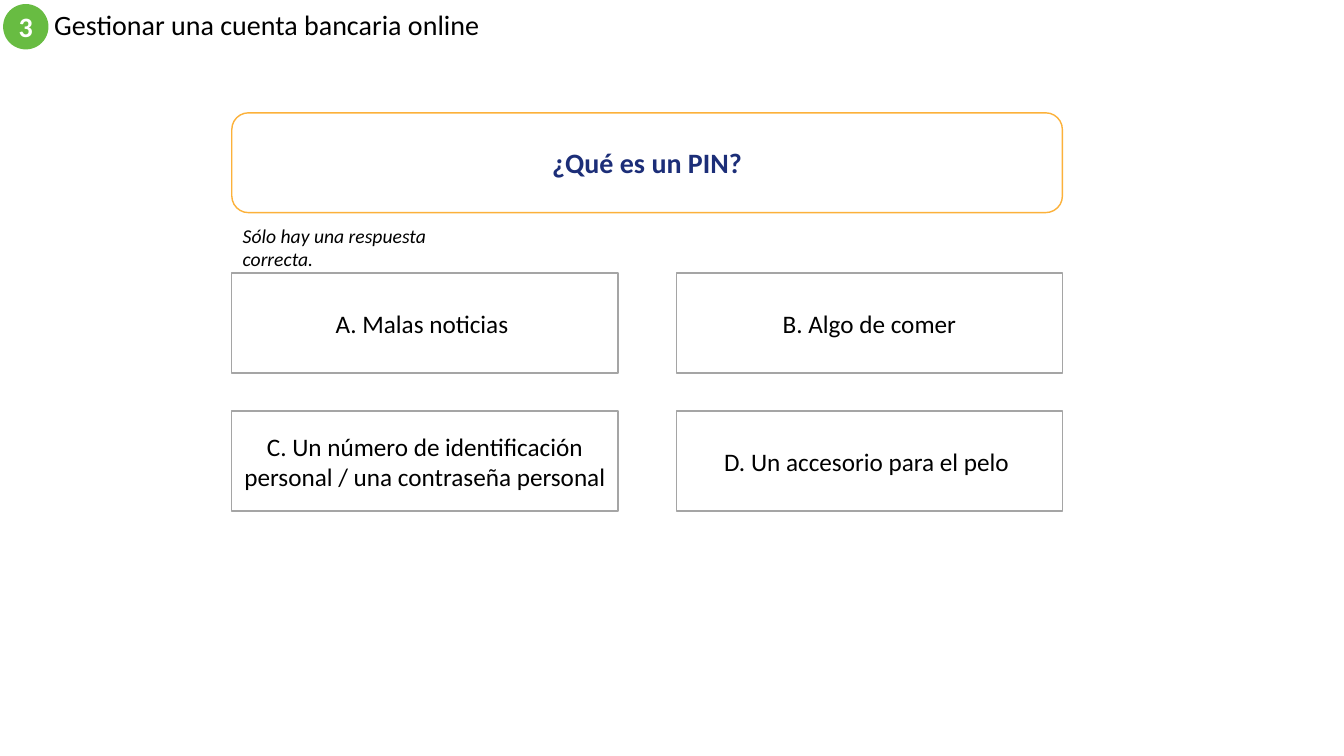
from pptx import Presentation
from pptx import util as u
from pptx.dml.color import RGBColor
from pptx.enum import shapes, text

COLORS = {
    "white": "FFFFFF",
    "black": "000000",
    "green": "68BC42",
    "orange": "FCB13A",
    "navy": "1C2E78",
    "gray": "A5A5A5",
}
FONT = "Calibri"
LEFT_COLUMN = 165.6
ANSWER_TOP = 195.1
COLUMN_STEP = 317.5
ROW_STEP = 98.6
ANSWER_WIDTH = 275.8
BOX_HEIGHT = 71.3
ANSWERS = [
    "A. Malas noticias ",
    "B. Algo de comer",
    "C. Un número de identificación personal / una contraseña personal",
    "D. Un accesorio para el pelo ",
]


def rgb(name):
    return RGBColor.from_string(COLORS[name])


def write_text(shape, content, size=18, color="black", bold=False, italic=False,
               align=text.PP_ALIGN.CENTER, anchor=text.MSO_ANCHOR.MIDDLE,
               line_spacing=None):
    frame = shape.text_frame
    frame.word_wrap = True
    frame.vertical_anchor = anchor
    paragraph = frame.paragraphs[0]
    paragraph.alignment = align
    paragraph.line_spacing = line_spacing
    run = paragraph.add_run()
    run.text = content
    run.font.name = FONT
    run.font.size = u.Pt(size)
    run.font.bold = bold
    run.font.italic = italic
    run.font.color.rgb = rgb(color)


def add_box(slide, kind, left, top, width, height, fill="white", line=None):
    shape = slide.shapes.add_shape(
        kind, u.Pt(left), u.Pt(top), u.Pt(width), u.Pt(height))
    shape.shadow.inherit = False
    shape.fill.solid()
    shape.fill.fore_color.rgb = rgb(fill)
    if line:
        shape.line.color.rgb = rgb(line)
        shape.line.width = u.Pt(1)
    else:
        shape.line.fill.background()
    return shape


def add_label(slide, content, left, top, width, height, **text_format):
    label = slide.shapes.add_textbox(
        u.Pt(left), u.Pt(top), u.Pt(width), u.Pt(height))
    write_text(label, content, align=text.PP_ALIGN.LEFT, **text_format)


def add_header(slide):
    add_label(slide, "Gestionar una cuenta bancaria online",
              31.7, 2.9, 576, 32.4, size=20, line_spacing=0.9)
    badge = add_box(slide, shapes.MSO_SHAPE.OVAL, 2.2, 2.9, 32.4, 32.4, fill="green")
    frame = badge.text_frame
    frame.margin_left = frame.margin_right = 0
    frame.margin_top = frame.margin_bottom = 0
    write_text(badge, "3", size=20, color="white", bold=True)


def add_answers(slide):
    """Place the answers in a grid of two columns."""
    for index, answer in enumerate(ANSWERS):
        row, column = divmod(index, 2)
        box = add_box(slide, shapes.MSO_SHAPE.RECTANGLE,
                      LEFT_COLUMN + column * COLUMN_STEP,
                      ANSWER_TOP + row * ROW_STEP,
                      ANSWER_WIDTH, BOX_HEIGHT, line="gray")
        write_text(box, answer)


def main():
    presentation = Presentation()
    presentation.slide_width = u.Pt(960)
    presentation.slide_height = u.Pt(540)
    slide = presentation.slides.add_slide(presentation.slide_layouts[6])

    add_header(slide)
    question = add_box(slide, shapes.MSO_SHAPE.ROUNDED_RECTANGLE, LEFT_COLUMN, 80.6,
                       COLUMN_STEP + ANSWER_WIDTH, BOX_HEIGHT, line="orange")
    write_text(question, "¿Qué es un PIN?", size=20, color="navy", bold=True)
    add_answers(slide)
    add_label(slide, "Sólo hay una respuesta correcta.", 166.3, 156.2, 169.9, 24.5,
              size=14, italic=True, anchor=text.MSO_ANCHOR.TOP)

    presentation.save("out.pptx")


if __name__ == "__main__":
    main()
